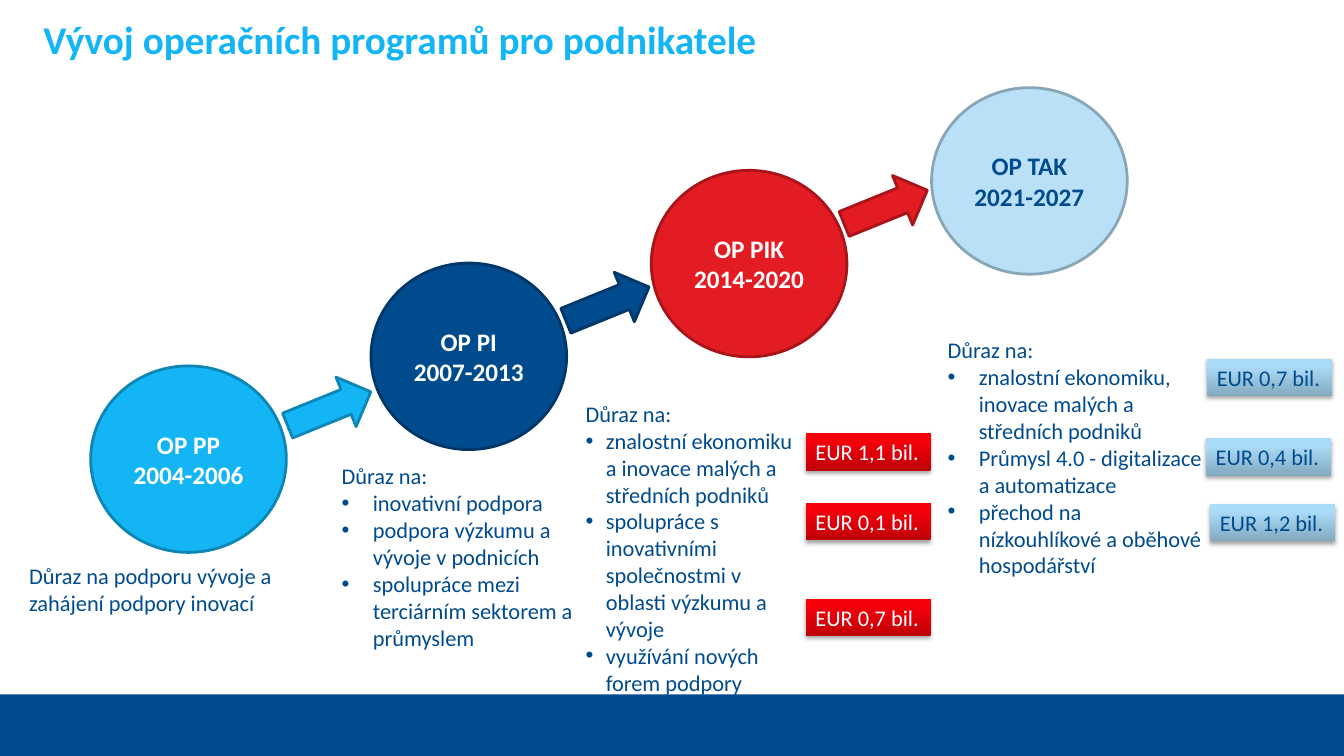
from dataclasses import dataclass

from lxml import etree
from pptx import Presentation
from pptx import util as u
from pptx.dml.color import RGBColor
from pptx.enum import shapes, text
from pptx.oxml.ns import qn
from pptx.shapes.autoshape import Shape
from pptx.slide import Slide

COLORS = {
    "white": "FFFFFF",
    "navy": "004B8D",
    "navy_edge": "003768",
    "cyan": "13B5F4",
    "cyan_edge": "0E86B5",
    "red": "E31B23",
    "red_edge": "A8141A",
    "pale": "B9E0F7",
    "pale_edge": "89A6B7",
}
RED_GRADIENT = {0: "BE0008", 80: "F6000A", 100: "F7000A"}
PALE_GRADIENT = {0: "83A9BF", 80: "AADBF8", 100: "AADDFB"}


@dataclass
class Programme:
    name: str
    years: str
    top: float
    color: str
    font_color: str = "white"
    arrow_top: float | None = None


@dataclass
class Focus:
    box: tuple[float, float, float, float]
    heading: str
    bullets: tuple[str, ...] = ()
    indent: float = 0.31


@dataclass
class Budget:
    left: float
    top: float
    amount: str
    gradient: dict[int, str]
    font_color: str


PROGRAMMES = [
    Programme("OP PP", "2004-2006", 3.63, "cyan", arrow_top=3.79),
    Programme("OP PI", "2007-2013", 2.61, "navy", arrow_top=2.75),
    Programme("OP PIK", "2014-2020", 1.69, "red", arrow_top=1.79),
    Programme("OP TAK", "2021-2027", 0.87, "pale", "navy"),
]
FOCUSES = [
    Focus((0.19, 5.53, 3.03, 0.64), "Důraz na podporu vývoje a zahájení podpory inovací"),
    Focus((3.29, 4.54, 2.6, 1.99), "Důraz na:", (
        "inovativní podpora",
        "podpora výzkumu a vývoje v podnicích",
        "spolupráce mezi terciárním sektorem a průmyslem",
    )),
    Focus((5.71, 3.92, 2.28, 3.06), "Důraz na:", (
        "znalostní ekonomiku a inovace malých a středních podniků",
        "spolupráce s inovativními společnostmi v oblasti výzkumu a vývoje",
        "využívání nových forem podpory",
    ), 0.2),
    Focus((9.3, 3.29, 2.77, 2.52), "Důraz na:", (
        "znalostní ekonomiku, inovace malých a středních podniků",
        "Průmysl 4.0 - digitalizace a automatizace",
        "přechod na nízkouhlíkové a oběhové hospodářství",
    )),
]
BUDGETS = [
    Budget(11.97, 3.56, "EUR 0,7 bil.", PALE_GRADIENT, "navy"),
    Budget(11.96, 4.35, "EUR 0,4 bil.", PALE_GRADIENT, "navy"),
    Budget(12, 5, "EUR 1,2 bil.", PALE_GRADIENT, "navy"),
    Budget(7.99, 4.3, "EUR 1,1 bil.", RED_GRADIENT, "white"),
    Budget(7.99, 4.99, "EUR 0,1 bil.", RED_GRADIENT, "white"),
    Budget(7.99, 5.94, "EUR 0,7 bil.", RED_GRADIENT, "white"),
]


def rgb(name: str) -> RGBColor:
    return RGBColor.from_string(COLORS[name])


def write_text(shape: Shape, lines: list[str], *, size: int = 16, color: str = "navy",
               bold: bool = False, align: text.PP_ALIGN = text.PP_ALIGN.LEFT,
               anchor: text.MSO_ANCHOR = text.MSO_ANCHOR.TOP, wrap: bool = True,
               grow: bool = True, indent: float = 0) -> None:
    frame = shape.text_frame
    frame.word_wrap = wrap
    frame.auto_size = text.MSO_AUTO_SIZE.SHAPE_TO_FIT_TEXT if grow else text.MSO_AUTO_SIZE.NONE
    frame.vertical_anchor = anchor
    for index, line in enumerate(lines):
        paragraph = frame.add_paragraph() if index else frame.paragraphs[0]
        paragraph.alignment = align
        if index and indent:
            properties = paragraph._p.get_or_add_pPr()
            properties.set("marL", str(u.Inches(indent)))
            properties.set("indent", str(-u.Inches(indent)))
            etree.SubElement(properties, qn("a:buFont"), typeface="Arial")
            etree.SubElement(properties, qn("a:buChar"), char="•")
        run = paragraph.add_run()
        run.text = line
        run.font.name = "Calibri"
        run.font.size = u.Pt(size)
        run.font.bold = bold
        run.font.color.rgb = rgb(color)


def add_box(slide: Slide, box: tuple[float, float, float, float]) -> Shape:
    return slide.shapes.add_textbox(*map(u.Inches, box))


def add_filled(slide: Slide, kind: shapes.MSO_SHAPE, box: tuple[float, float, float, float],
               color: str, edge: str | None = None) -> Shape:
    shape = slide.shapes.add_shape(kind, *map(u.Inches, box))
    shape.shadow.inherit = False
    shape.fill.solid()
    shape.fill.fore_color.rgb = rgb(color)
    if edge:
        shape.line.color.rgb = rgb(edge)
        shape.line.width = u.Pt(2)
    else:
        shape.line.fill.background()
    return shape


def add_programme(slide: Slide, index: int, programme: Programme) -> None:
    edge = f"{programme.color}_edge"
    circle = add_filled(slide, shapes.MSO_SHAPE.OVAL,
                        (0.9 + 2.78 * index, programme.top, 1.94, 1.85), programme.color, edge)
    write_text(circle, [programme.name, programme.years], size=18, bold=True,
               color=programme.font_color, align=text.PP_ALIGN.CENTER,
               anchor=text.MSO_ANCHOR.MIDDLE, grow=False)
    if programme.arrow_top is not None:
        arrow = add_filled(slide, shapes.MSO_SHAPE.RIGHT_ARROW,
                           (2.82 + 2.76 * index, programme.arrow_top, 0.89, 0.53),
                           programme.color, edge)
        arrow.rotation = 337.9


def add_budget(slide: Slide, budget: Budget) -> None:
    label = add_filled(slide, shapes.MSO_SHAPE.RECTANGLE,
                       (budget.left, budget.top, 1.24, 0.37), "white")
    label.fill.gradient()
    label.fill.gradient_angle = 90
    properties = label._element.spPr
    stops = properties.find(".//" + qn("a:gsLst"))
    for stop in list(stops):
        stops.remove(stop)
    for position, color in budget.gradient.items():
        stop = etree.SubElement(stops, qn("a:gs"), pos=str(position * 1000))
        etree.SubElement(stop, qn("a:srgbClr"), val=color)
    shadow = etree.SubElement(properties.find(qn("a:effectLst")), qn("a:outerShdw"),
                              blurRad=str(u.Pt(3.1)), dist=str(u.Pt(1.8)),
                              dir="5400000", rotWithShape="0")
    shade = etree.SubElement(shadow, qn("a:srgbClr"), val="000000")
    etree.SubElement(shade, qn("a:alpha"), val="35000")
    write_text(label, [budget.amount], color=budget.font_color, wrap=False)


def main() -> None:
    presentation = Presentation()
    presentation.slide_width = u.Inches(13.33)
    presentation.slide_height = u.Inches(7.5)
    slide = presentation.slides.add_slide(presentation.slide_layouts[6])
    slide.background.fill.solid()
    slide.background.fill.fore_color.rgb = rgb("navy")
    add_filled(slide, shapes.MSO_SHAPE.RECTANGLE, (0, 0, 13.33, 6.89), "white")

    title = add_box(slide, (0.43, 0.15, 12.72, 0.47))
    frame = title.text_frame
    frame.margin_left = frame.margin_top = frame.margin_right = frame.margin_bottom = 0
    write_text(title, ["Vývoj operačních programů pro podnikatele"],
               size=28, color="cyan", bold=True)

    for focus in FOCUSES:
        write_text(add_box(slide, focus.box), [focus.heading, *focus.bullets],
                   indent=focus.indent)
    for index, programme in enumerate(PROGRAMMES):
        add_programme(slide, index, programme)
    for budget in BUDGETS:
        add_budget(slide, budget)
    presentation.save("out.pptx")


if __name__ == "__main__":
    main()
